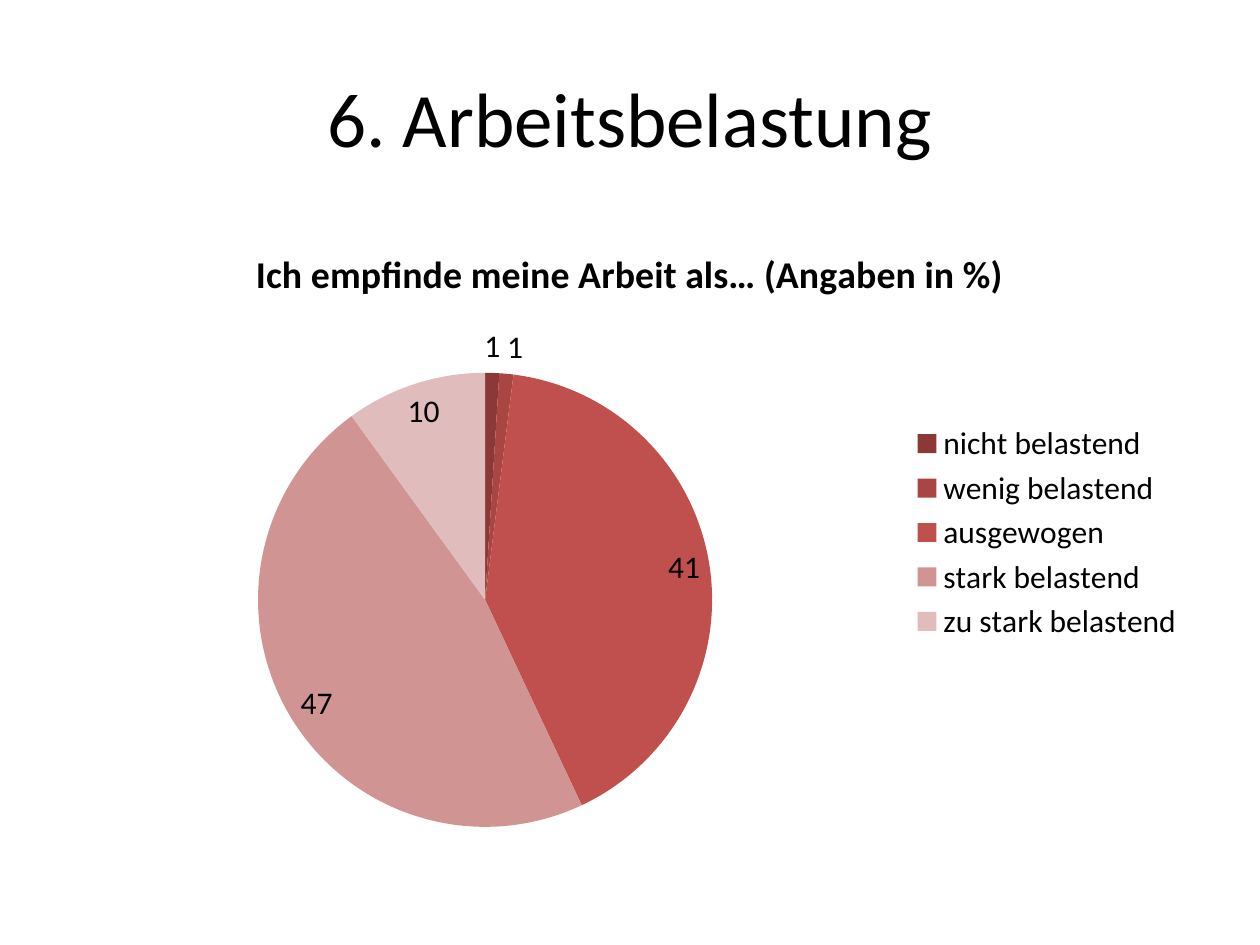
from dataclasses import dataclass

from pptx import Presentation
from pptx.chart.data import CategoryChartData
from pptx.dml.color import RGBColor
from pptx.enum.chart import XL_CHART_TYPE, XL_LABEL_POSITION, XL_LEGEND_POSITION
from pptx.enum.text import MSO_ANCHOR, PP_ALIGN
from pptx.util import Cm, Pt

PIE = XL_CHART_TYPE.PIE
BEST_FIT = XL_LABEL_POSITION.BEST_FIT
RIGHT = XL_LEGEND_POSITION.RIGHT
MIDDLE = MSO_ANCHOR.MIDDLE
CENTER = PP_ALIGN.CENTER


@dataclass(frozen=True)
class Theme:
    font: str = "Calibri"
    text: str = "000000"
    slices: tuple = ("8C3836", "A94643", "C0504D", "D09493", "E0BCBC")
    title_size: float = 44
    chart_title_size: float = 21.6
    chart_size: float = 18


class Deck:
    def __init__(self, theme):
        self.theme = theme
        self.prs = Presentation()
        self.prs.slide_width = Cm(25.4)
        self.prs.slide_height = Cm(19.05)
        self.s = self.prs.slides.add_slide(self.prs.slide_layouts[6])

    def style(self, font, size, bold=False):
        font.name = self.theme.font
        font.size = Pt(size)
        font.bold = bold
        font.color.rgb = RGBColor.from_string(self.theme.text)

    def title(self, text, x, y, w, h):
        sp = self.s.shapes.add_textbox(Cm(x), Cm(y), Cm(w), Cm(h))
        tf = sp.text_frame
        tf.word_wrap = True
        tf.vertical_anchor = MIDDLE
        p = tf.paragraphs[0]
        p.text = text
        p.alignment = CENTER
        self.style(p.font, self.theme.title_size)

    def pie(self, title, values, x, y, w, h):
        data = CategoryChartData(number_format="0")
        data.categories = list(values)
        data.add_series(title, list(values.values()))
        chart = self.s.shapes.add_chart(PIE, Cm(x), Cm(y), Cm(w), Cm(h), data).chart
        self.style(chart.font, self.theme.chart_size)

        chart.has_title = True
        p = chart.chart_title.text_frame.paragraphs[0]
        p.text = title
        self.style(p.font, self.theme.chart_title_size, bold=True)

        chart.has_legend = True
        chart.legend.position = RIGHT
        chart.legend.include_in_layout = False

        plot = chart.plots[0]
        plot.vary_by_categories = True
        plot.has_data_labels = True
        labels = plot.data_labels
        labels.show_value = True
        labels.show_percentage = False
        labels.position = BEST_FIT
        self.style(labels.font, self.theme.chart_size)

        for i, color in enumerate(self.theme.slices):
            fill = plot.series[0].points[i].format.fill
            fill.solid()
            fill.fore_color.rgb = RGBColor.from_string(color)

    def save(self):
        self.prs.save("out.pptx")


def main():
    deck = Deck(Theme())
    deck.title("6. Arbeitsbelastung", 1.27, 0.76, 22.86, 3.18)
    burden = {
        "nicht belastend": 1,
        "wenig belastend": 1,
        "ausgewogen": 41,
        "stark belastend": 47,
        "zu stark belastend": 10,
    }
    deck.pie("Ich empfinde meine Arbeit als… (Angaben in %)", burden,
             1.27, 4.45, 22.86, 12.57)
    deck.save()


if __name__ == "__main__":
    main()
